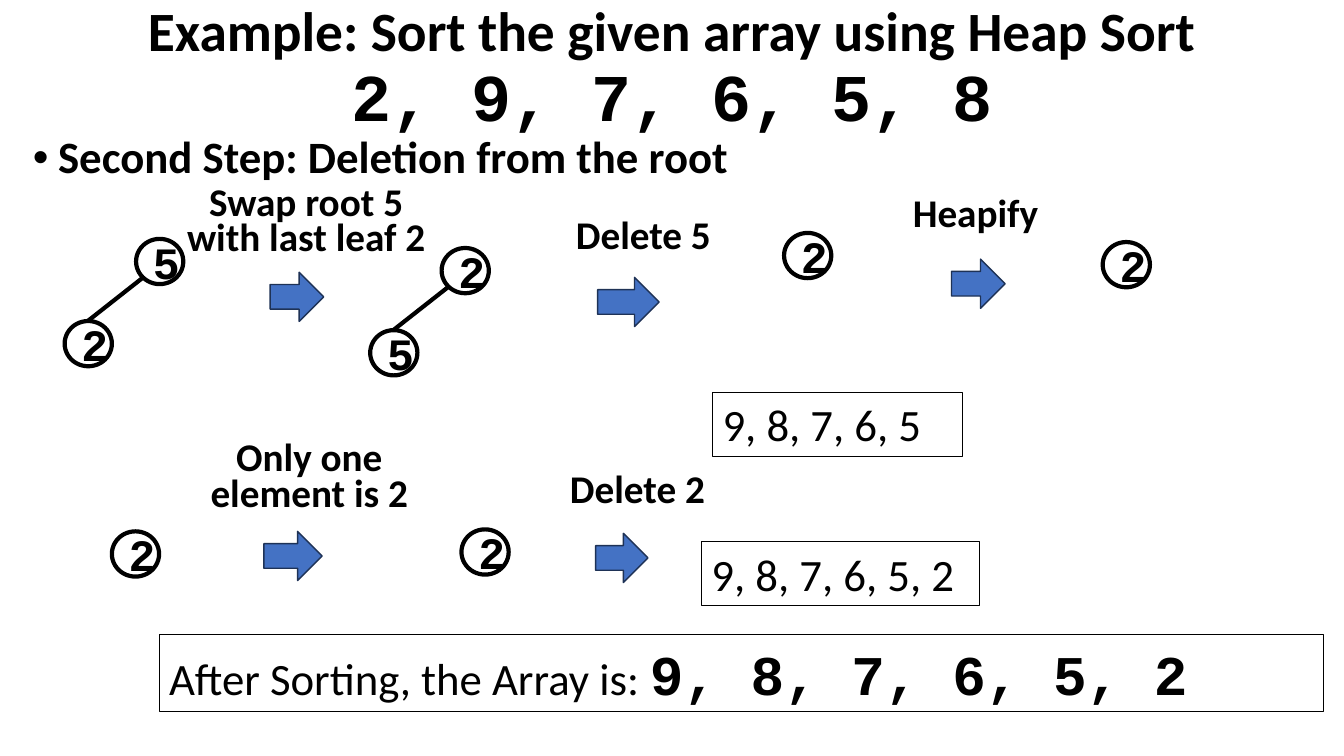
from lxml.etree import SubElement
from pptx import Presentation
from pptx.dml.color import RGBColor
from pptx.enum.shapes import MSO_CONNECTOR, MSO_SHAPE
from pptx.enum.text import MSO_ANCHOR, PP_ALIGN
from pptx.oxml.ns import qn
from pptx.util import Cm, Pt

BLACK = RGBColor(0x00, 0x00, 0x00)
BLUE = RGBColor(0x44, 0x72, 0xC4)
NAVY = RGBColor(0x1E, 0x32, 0x56)
MONO = "Courier New"
NODE_W, NODE_H = 1.19, 1.14


def add_run(p, text, size=32, font="Calibri", bold=False):
    r = p.add_run()
    r.text = text
    r.font.size = Pt(size)
    r.font.name = font
    r.font.bold = bold
    r.font.color.rgb = BLACK


def set_text(sp, text, align=PP_ALIGN.LEFT, anchor=MSO_ANCHOR.TOP, spacing=1.0, **fmt):
    """Write the first run and return its paragraph, so that more can be added."""
    tf = sp.text_frame
    tf.word_wrap = True
    tf.vertical_anchor = anchor
    p = tf.paragraphs[0]
    p.alignment = align
    p.line_spacing = spacing
    add_run(p, text, **fmt)
    return p


def add_text(slide, x, y, w, h, text, **fmt):
    sp = slide.shapes.add_textbox(Cm(x), Cm(y), Cm(w), Cm(h))
    return set_text(sp, text, **fmt)


def add_preset(slide, kind, x, y, w, h, line, width, fill=None):
    sp = slide.shapes.add_shape(kind, Cm(x), Cm(y), Cm(w), Cm(h))
    sp.shadow.inherit = False
    if fill is None:
        sp.fill.background()
    else:
        sp.fill.solid()
        sp.fill.fore_color.rgb = fill
    sp.line.color.rgb = line
    sp.line.width = Pt(width)
    return sp


def add_arrow(slide, x, y, w):
    add_preset(slide, MSO_SHAPE.RIGHT_ARROW, x, y, w, 1.24, NAVY, 1, BLUE)


def add_box(slide, x, y, w, h, text):
    sp = add_preset(slide, MSO_SHAPE.RECTANGLE, x, y, w, h, BLACK, 0.75)
    return set_text(sp, text)


def add_node(slide, x, y, value):
    sp = add_preset(slide, MSO_SHAPE.OVAL, x, y, NODE_W, NODE_H, BLACK, 3)
    set_text(sp, value, align=PP_ALIGN.CENTER, anchor=MSO_ANCHOR.MIDDLE,
             font=MONO, bold=True)


def add_tree(slide, x, y, root, leaf):
    """Draw a root at (x, y) with one left child and the edge between them."""
    add_node(slide, x, y, root)
    add_node(slide, x - 1.8, y + 2.07, leaf)
    edge = slide.shapes.add_connector(
        MSO_CONNECTOR.STRAIGHT, Cm(x + 0.18), Cm(y + 0.97), Cm(x - 1.22), Cm(y + 2.07))
    edge.line.color.rgb = BLACK
    edge.line.width = Pt(3)
    SubElement(edge._element.spPr, qn("a:effectLst"))


def add_bullet(p):
    pPr = p._p.get_or_add_pPr()
    pPr.set("marL", "228600")
    pPr.set("indent", "-228600")
    SubElement(pPr, qn("a:buFont")).set("typeface", "Arial")
    SubElement(pPr, qn("a:buChar")).set("char", "•")


def main():
    prs = Presentation()
    prs.slide_width, prs.slide_height = Cm(33.87), Cm(19.05)
    slide = prs.slides.add_slide(prs.slide_layouts[6])

    title = add_text(slide, 0, 0, 33.87, 3.51,
                     "Example: Sort the given array using Heap Sort",
                     align=PP_ALIGN.CENTER, anchor=MSO_ANCHOR.MIDDLE,
                     spacing=0.9, size=39.6, bold=True)
    title.add_line_break()
    add_run(title, "2, 9, 7, 6, 5, 8", size=47.7, font=MONO, bold=True)

    step = add_text(slide, 0.58, 3.28, 22.1, 1.63,
                    "Second Step: Deletion from the root", spacing=0.9, bold=True)
    add_bullet(step)

    for x, y, w in [(6.81, 6.86, 1.35), (15.06, 6.99, 1.55), (23.98, 6.53, 1.35),
                    (6.65, 13.39, 1.47), (15.01, 13.44, 1.32)]:
        add_arrow(slide, x, y, w)

    add_tree(slide, 3.43, 6.02, "5", "2")
    add_tree(slide, 11.13, 6.25, "2", "5")
    for x, y in [(19.76, 5.87), (27.79, 6.1), (2.82, 13.39), (11.63, 13.34)]:
        add_node(slide, x, y, "2")

    add_box(slide, 17.96, 9.88, 6.3, 1.63, "9, 8, 7, 6, 5")
    add_box(slide, 17.68, 13.64, 7.01, 1.63, "9, 8, 7, 6, 5, 2")
    result = add_box(slide, 4.01, 15.98, 29.34, 1.96, "After Sorting, the Array is: ")
    add_run(result, "9, 8, 7, 6, 5, 2", size=40, font=MONO, bold=True)

    for x, y, w, h, text in [
        (4.39, 4.62, 6.65, 2.08, "Swap root 5 with last leaf 2"),
        (13.74, 5.46, 4.95, 1.19, "Delete 5"),
        (22.68, 4.9, 3.81, 1.19, "Heapify"),
        (13.59, 11.84, 4.95, 1.19, "Delete 2"),
        (4.47, 11.05, 6.65, 2.08, "Only one element is 2"),
    ]:
        add_text(slide, x, y, w, h, text, align=PP_ALIGN.CENTER,
                 spacing=0.75, size=28, bold=True)

    prs.save("out.pptx")


if __name__ == "__main__":
    main()
